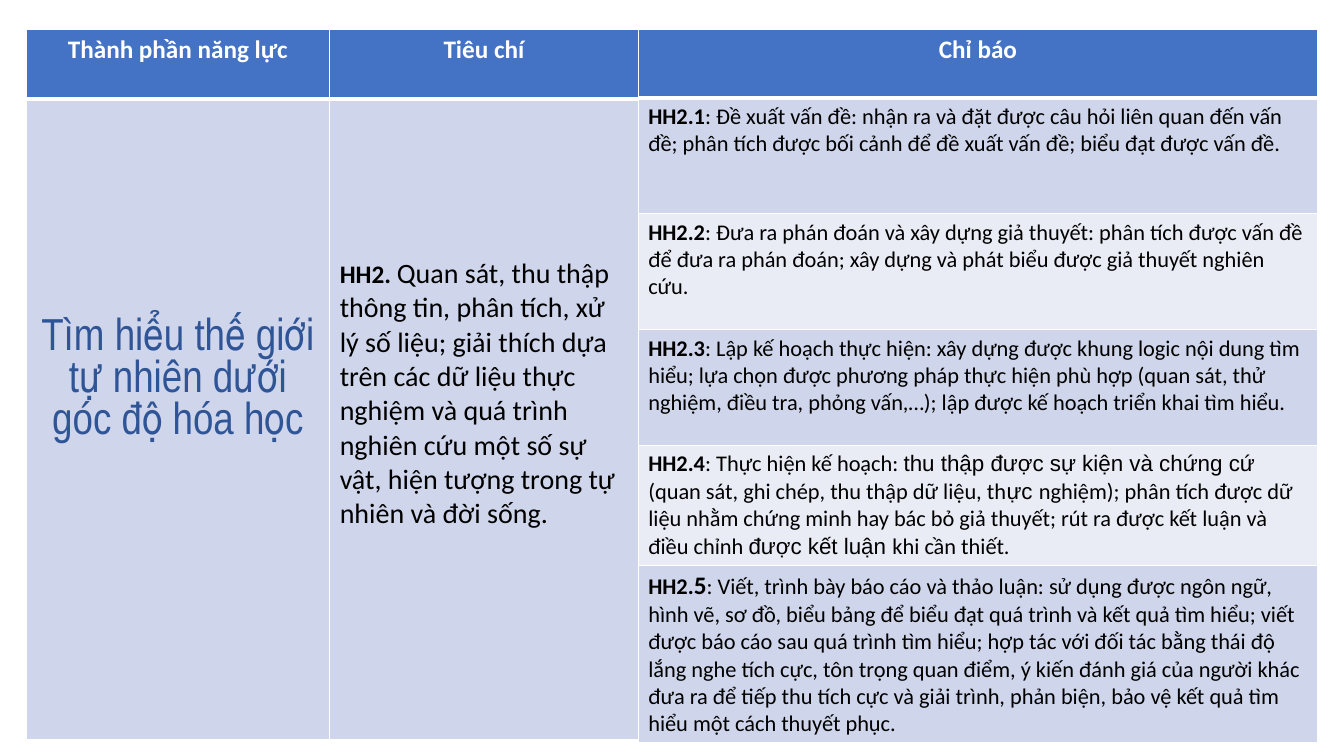
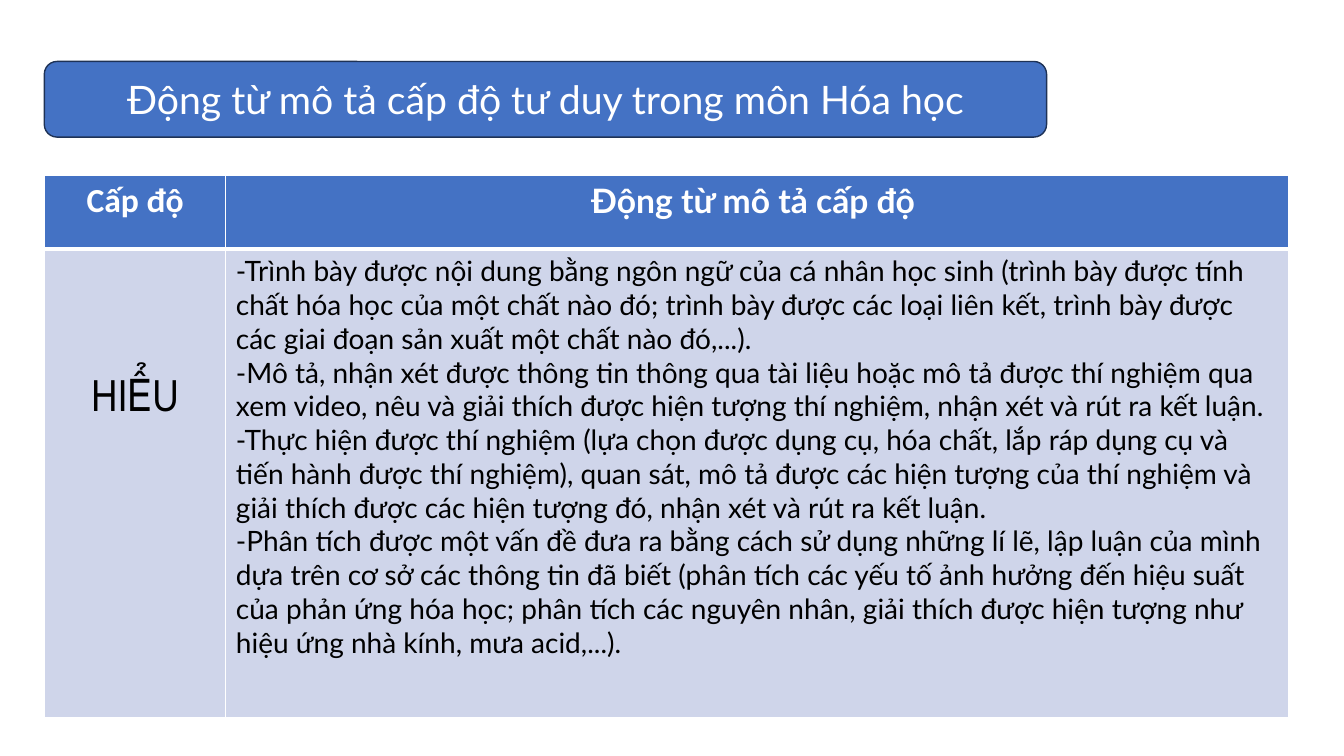
from lxml import etree
from pptx import Presentation
from pptx.dml.color import RGBColor
from pptx.enum import shapes, text
from pptx.oxml import ns
from pptx.util import Inches, Pt

COLORS = {"header": "4472C4", "band": "CFD5EA", "light": "E9EBF5", "outline": "1E3256",
          "accent": "2F5597", "white": "FFFFFF", "black": "000000"}
CENTER = text.PP_ALIGN.CENTER
NARROW_LINE = Pt(30)

INDICATORS = [
    [("HH2.1", {"bold": True}),
     (": Đề xuất vấn đề: nhận ra và đặt được câu hỏi liên quan đến vấn đề; phân tích được "
      "bối cảnh để đề xuất vấn đề; biểu đạt được vấn đề.", {})],
    [("HH2.2", {"bold": True}),
     (": Đưa ra phán đoán và xây dựng giả thuyết: phân tích được vấn đề để đưa ra phán đoán; "
      "xây dựng và phát biểu được giả thuyết nghiên cứu.", {})],
    [("HH2.3", {"bold": True}),
     (": Lập kế hoạch thực hiện: xây dựng được khung logic nội dung tìm hiểu; lựa chọn được "
      "phương pháp thực hiện phù hợp (quan sát, thử nghiệm, điều tra, phỏng vấn,…); lập được "
      "kế hoạch triển khai tìm hiểu.", {})],
    [("HH2.4", {"bold": True}),
     (": Thực hiện kế hoạch: ", {}),
     ("thu thập được sự kiện và chứng cứ ", {"name": "Arial"}),
     ("(quan sát, ghi chép, thu thập dữ liệu, th", {}),
     ("ực ", {"name": "Arial"}),
     ("nghiệm); phân tích được dữ liệu nhằm chứng minh hay bác bỏ giả thuyết; rút ra được "
      "kết luận và điều chỉnh ", {}),
     ("được kết luận ", {"name": "Arial"}),
     ("khi cần thiết.", {})],
    [("HH2.", {"bold": True}),
     ("5", {"bold": True, "size": 18}),
     (": Viết, trình bày báo cáo và thảo luận: sử dụng được ngôn ngữ, hình vẽ, sơ đồ, biểu "
      "bảng để biểu đạt quá trình và kết quả tìm hiểu; viết được báo cáo sau quá trình tìm "
      "hiểu; hợp tác với đối tác bằng thái độ lắng nghe tích cực, tôn trọng quan điểm, ý kiến "
      "đánh giá của người khác đưa ra để tiếp thu tích cực và giải trình, phản biện, bảo vệ "
      "kết quả tìm hiểu một cách thuyết phục.", {})],
]
CRITERION = [
    ("HH2. ", {"bold": True, "size": 18}),
    ("Quan sát, thu thập thông tin, phân tích, xử lý số liệu; giải thích dựa trên các dữ liệu "
     "thực nghiệm và quá trình nghiên cứu một số sự vật, hiện tượng trong tự nhiên và đời "
     "sống.", {}),
]
VERBS = [
    "-Trình bày được nội dung bằng ngôn ngữ của cá nhân học sinh (trình bày được tính chất hóa "
    "học của một chất nào đó; trình bày được các loại liên kết, trình bày được các giai đoạn "
    "sản xuất một chất nào đó,...).",
    "-Mô tả, nhận xét được thông tin thông qua tài liệu hoặc mô tả được thí nghiệm qua xem "
    "video, nêu và giải thích được hiện tượng thí nghiệm, nhận xét và rút ra kết luận.",
    "-Thực hiện được thí nghiệm (lựa chọn được dụng cụ, hóa chất, lắp ráp dụng cụ và tiến hành "
    "được thí nghiệm), quan sát, mô tả được các hiện tượng của thí nghiệm và giải thích được "
    "các hiện tượng đó, nhận xét và rút ra kết luận.",
    "-Phân tích được một vấn đề đưa ra bằng cách sử dụng những lí lẽ, lập luận của mình dựa "
    "trên cơ sở các thông tin đã biết (phân tích các yếu tố ảnh hưởng đến hiệu suất của phản "
    "ứng hóa học; phân tích các nguyên nhân, giải thích được hiện tượng như hiệu ứng nhà kính, "
    "mưa acid,...).",
]


def rgb(name):
    """Return the palette colour of that name."""
    return RGBColor.from_string(COLORS[name])


def write(frame, paragraphs, size, name="Calibri", color="black", bold=False,
          align=text.PP_ALIGN.LEFT, line=None):
    """Fill a text frame; a paragraph is a string or a list of (text, overrides)."""
    for index, content in enumerate(paragraphs):
        paragraph = frame.add_paragraph() if index else frame.paragraphs[0]
        paragraph.alignment = align
        if line:
            paragraph.line_spacing = line
        for words, changes in [(content, {})] if isinstance(content, str) else content:
            run = paragraph.add_run()
            run.text = words
            style = {"size": size, "name": name, "bold": bold} | changes
            run.font.size = Pt(style["size"])
            run.font.name = style["name"]
            run.font.bold = style["bold"]
            run.font.color.rgb = rgb(color)


def set_borders(cell, row):
    """Draw white cell borders, with a thick rule under the header row."""
    properties = cell._tc.get_or_add_tcPr()
    widths = {"L": 1, "R": 1, "T": 3 if row == 1 else 1, "B": 1 if row else 3}
    for side, width in widths.items():
        border = etree.SubElement(properties, ns.qn(f"a:ln{side}"), w=str(Pt(width)))
        fill = etree.SubElement(border, ns.qn("a:solidFill"))
        etree.SubElement(fill, ns.qn("a:srgbClr"), val=COLORS["white"])


def add_grid(slide, left, top, columns, rows):
    """Add a table with a blue header row and tinted body rows."""
    frame = slide.shapes.add_table(len(rows), len(columns), Inches(left), Inches(top),
                                   Inches(sum(columns)), Inches(sum(rows)))
    table = frame.table
    for column, width in zip(table.columns, columns):
        column.width = Inches(width)
    for index, height in enumerate(rows):
        table.rows[index].height = Inches(height)
        for cell in table.rows[index].cells:
            set_borders(cell, index)
            cell.fill.solid()
            tint = "band" if index % 2 else "light"
            cell.fill.fore_color.rgb = rgb(tint if index else "header")
    return table


def write_header(cell, words, size, name="Calibri"):
    """Write a centred white column heading."""
    write(cell.text_frame, [words], size, name, "white", True, CENTER)


def write_topic(cell, words, color, top):
    """Write a large narrow row label at a distance below the cell's top."""
    cell.margin_top = Inches(top)
    write(cell.text_frame, [words], 32, "Arial Narrow", color, align=CENTER, line=NARROW_LINE)


def add_competence_table(slide, left, top):
    """Add the component and criterion columns."""
    table = add_grid(slide, left, top, [3.01, 3.06], [0.69, 6.36])
    write_header(table.cell(0, 0), "Thành phần năng lực", 18)
    write_header(table.cell(0, 1), "Tiêu chí", 18)
    write_topic(table.cell(1, 0), "Tìm hiểu thế giới tự nhiên dưới góc độ hóa học",
                "accent", 2.17)
    criterion = table.cell(1, 1)
    criterion.margin_top = Inches(1.57)
    write(criterion.text_frame, [CRITERION], 20)


def add_indicator_table(slide, left, top):
    """Add the column of indicators."""
    table = add_grid(slide, left, top, [6.74], [0.68] + [1.15] * len(INDICATORS))
    write_header(table.cell(0, 0), "Chỉ báo", 18)
    for row, indicator in enumerate(INDICATORS, 1):
        write(table.cell(row, 0).text_frame, [indicator], 16)


def add_banner(slide, left, top, width, height, words):
    """Add the rounded title banner."""
    banner = slide.shapes.add_shape(shapes.MSO_SHAPE.ROUNDED_RECTANGLE, Inches(left),
                                    Inches(top), Inches(width), Inches(height))
    banner.shadow.inherit = False
    banner.fill.solid()
    banner.fill.fore_color.rgb = rgb("header")
    banner.line.color.rgb = rgb("outline")
    banner.line.width = Pt(1)
    banner.text_frame.word_wrap = True
    banner.text_frame.vertical_anchor = text.MSO_ANCHOR.MIDDLE
    write(banner.text_frame, [words], 28, "Lato", "white", align=CENTER)


def add_verb_table(slide, left, top):
    """Add the table of verbs for a thinking level."""
    table = add_grid(slide, left, top, [1.8, 10.54], [0.73, 4.65])
    write_header(table.cell(0, 0), "Cấp độ", 24)
    write_header(table.cell(0, 1), "Động từ mô tả cấp độ ", 24, "Lato")
    write_topic(table.cell(1, 0), "HIỂU", "black", 1.29)
    write(table.cell(1, 1).text_frame, VERBS, 20, "Lato")


def main():
    """Build and save the presentation."""
    presentation = Presentation()
    presentation.slide_width, presentation.slide_height = Inches(13.33), Inches(7.5)
    blank = presentation.slide_layouts[6]
    competence = presentation.slides.add_slide(blank)
    add_competence_table(competence, 0.26, 0.29)
    add_indicator_table(competence, 6.33, 0.29)
    levels = presentation.slides.add_slide(blank)
    add_verb_table(levels, 0.44, 1.74)
    add_banner(levels, 0.44, 0.61, 9.94, 0.75, "Động từ mô tả cấp độ tư duy trong môn Hóa học")
    presentation.save("out.pptx")


if __name__ == "__main__":
    main()
